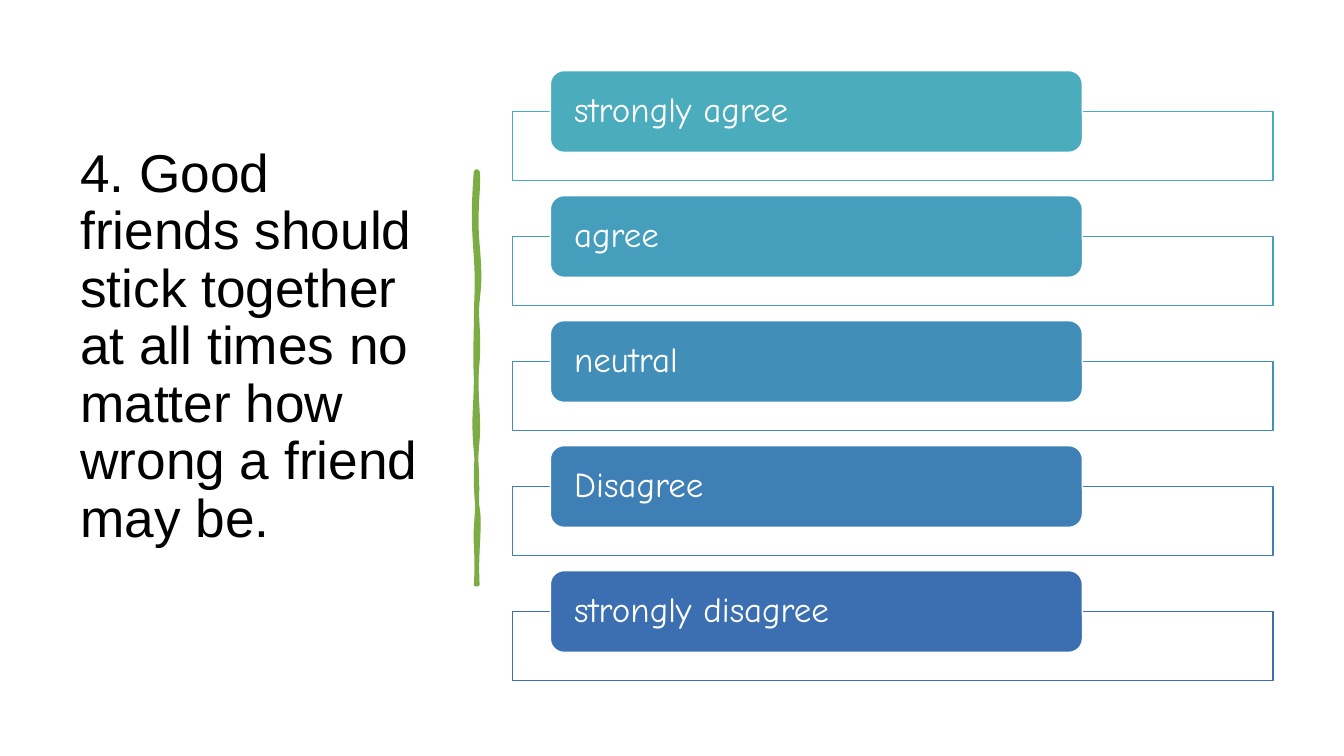
from dataclasses import dataclass

from lxml.etree import SubElement
from pptx import Presentation
from pptx.dml.color import RGBColor
from pptx.enum.shapes import MSO_SHAPE
from pptx.enum.text import MSO_ANCHOR, MSO_AUTO_SIZE, PP_ALIGN
from pptx.oxml.ns import qn
from pptx.shapes.autoshape import Shape
from pptx.slide import Slide
from pptx.util import Cm, Pt


@dataclass(frozen=True)
class Theme:
    title_font: str = "Arial"
    answer_font: str = "Comic Neue"
    title_size: int = 38
    answer_size: int = 25
    line_spacing: float = 0.9
    text: str = "000000"
    white: str = "FFFFFF"
    brush: str = "7BAD44"


@dataclass(frozen=True)
class Answer:
    text: str
    color: str


@dataclass(frozen=True)
class Box:
    left: float
    top: float
    width: float
    height: float


@dataclass(frozen=True)
class Curve:
    """Cubic curve: two control points and the end point, in centimetres."""
    control_1: tuple[float, float]
    control_2: tuple[float, float]
    end: tuple[float, float]


THEME = Theme()
QUESTION = ("4. Good friends should stick together at all times "
            "no matter how wrong a friend may be.")
ANSWERS = [
    Answer("strongly agree", "4AACBC"),
    Answer("agree", "449EBC"),
    Answer("neutral", "418EB8"),
    Answer("Disagree", "3E7FB5"),
    Answer("strongly disagree", "3B6FB1"),
]
SLIDE_BOX = Box(0, 0, 33.87, 19.05)
TITLE_BOX = Box(1.77, 1.78, 9.5, 15.52)
FRAME_BOX = Box(12.91, 2.81, 19.17, 1.74)
LABEL_BOX = Box(13.87, 1.78, 13.41, 2.06)
ANSWER_PITCH = 3.15

# Brush stroke: down the right edge, then up the left edge
BRUSH_START = (11.99, 4.32)
BRUSH_CURVES = [
    Curve((12.01, 4.32), (12.01, 4.32), (12.04, 4.32)),
    Curve((12.09, 4.72), (11.96, 5.26), (12.04, 6.17)),
    Curve((12.12, 7.09), (12.07, 7.24), (12.04, 7.59)),
    Curve((11.99, 7.95), (12.09, 8.41), (12.04, 9.12)),
    Curve((11.96, 9.83), (12.09, 10.49), (12.04, 11.07)),
    Curve((11.99, 11.63), (11.96, 12.32), (12.04, 12.8)),
    Curve((12.12, 13.28), (11.99, 13.92), (12.04, 14.73)),
    Curve((12.01, 14.73), (12.01, 14.73), (11.99, 14.73)),
    Curve((12.04, 14.07), (11.96, 13.61), (11.99, 13.31)),
    Curve((12.01, 13.03), (12.07, 12.27), (11.99, 11.38)),
    Curve((11.91, 10.49), (11.99, 10.31), (11.99, 9.53)),
    Curve((11.96, 8.76), (11.99, 8.66), (11.99, 8.1)),
    Curve((11.99, 7.57), (12.04, 7.24), (11.99, 6.48)),
    Curve((11.94, 5.74), (11.91, 5.38), (11.99, 4.32)),
]


def paint(shape: Shape, fill: str, line: str, width: float) -> None:
    shape.shadow.inherit = False
    shape.fill.solid()
    shape.fill.fore_color.rgb = RGBColor.from_string(fill)
    shape.line.color.rgb = RGBColor.from_string(line)
    shape.line.width = Pt(width)


def write(shape: Shape, text: str, font: str, size: int, color: str) -> None:
    frame = shape.text_frame
    frame.word_wrap = True
    frame.auto_size = MSO_AUTO_SIZE.NONE
    frame.vertical_anchor = MSO_ANCHOR.MIDDLE
    paragraph = frame.paragraphs[0]
    paragraph.text = text
    paragraph.alignment = PP_ALIGN.LEFT
    paragraph.line_spacing = THEME.line_spacing
    paragraph.font.name = font
    paragraph.font.size = Pt(size)
    paragraph.font.color.rgb = RGBColor.from_string(color)


def add_box(slide: Slide, kind: MSO_SHAPE, box: Box, offset: float = 0) -> Shape:
    return slide.shapes.add_shape(kind, Cm(box.left), Cm(box.top + offset),
                                  Cm(box.width), Cm(box.height))


def add_backdrop(slide: Slide) -> None:
    backdrop = add_box(slide, MSO_SHAPE.RECTANGLE, SLIDE_BOX)
    paint(backdrop, THEME.white, THEME.white, 0)
    backdrop.line.fill.background()
    # Behind the title
    slide.shapes.title.element.addprevious(backdrop.element)


def add_title(slide: Slide) -> None:
    title = slide.shapes.title
    title.left, title.top = Cm(TITLE_BOX.left), Cm(TITLE_BOX.top)
    title.width, title.height = Cm(TITLE_BOX.width), Cm(TITLE_BOX.height)
    write(title, QUESTION, THEME.title_font, THEME.title_size, THEME.text)
    # The deeper bottom margin lifts the text above the middle
    title.text_frame.margin_bottom = Cm(1.69)


def add_brush_stroke(slide: Slide) -> None:
    builder = slide.shapes.build_freeform(Cm(BRUSH_START[0]), Cm(BRUSH_START[1]))
    builder.add_line_segments([(Cm(curve.end[0]), Cm(curve.end[1]))
                               for curve in BRUSH_CURVES], close=True)
    brush = builder.convert_to_shape()
    paint(brush, THEME.brush, THEME.brush, 2.75)
    # Bend each straight segment into its curve
    segments = list(brush.element.iter(qn("a:lnTo")))
    for segment, curve in zip(segments, BRUSH_CURVES):
        segment.tag = qn("a:cubicBezTo")
        for point in list(segment):
            segment.remove(point)
        for x, y in (curve.control_1, curve.control_2, curve.end):
            SubElement(segment, qn("a:pt"), x=str(Cm(x) - brush.left),
                       y=str(Cm(y) - brush.top))


def add_answer(slide: Slide, answer: Answer, offset: float) -> None:
    frame = add_box(slide, MSO_SHAPE.RECTANGLE, FRAME_BOX, offset)
    paint(frame, THEME.white, answer.color, 1)
    label = add_box(slide, MSO_SHAPE.ROUNDED_RECTANGLE, LABEL_BOX, offset)
    paint(label, answer.color, THEME.white, 1)
    write(label, answer.text, THEME.answer_font, THEME.answer_size, THEME.white)
    label.text_frame.margin_left = label.text_frame.margin_right = Cm(0.5)
    label.text_frame.margin_top = label.text_frame.margin_bottom = 0


def main() -> None:
    presentation = Presentation()
    presentation.slide_width = Cm(SLIDE_BOX.width)
    presentation.slide_height = Cm(SLIDE_BOX.height)
    slide = presentation.slides.add_slide(presentation.slide_layouts[5])
    # Backdrop, question and divider
    add_backdrop(slide)
    add_title(slide)
    add_brush_stroke(slide)
    # Answer scale
    for index, answer in enumerate(ANSWERS):
        add_answer(slide, answer, index * ANSWER_PITCH)
    presentation.save("out.pptx")


if __name__ == "__main__":
    main()
